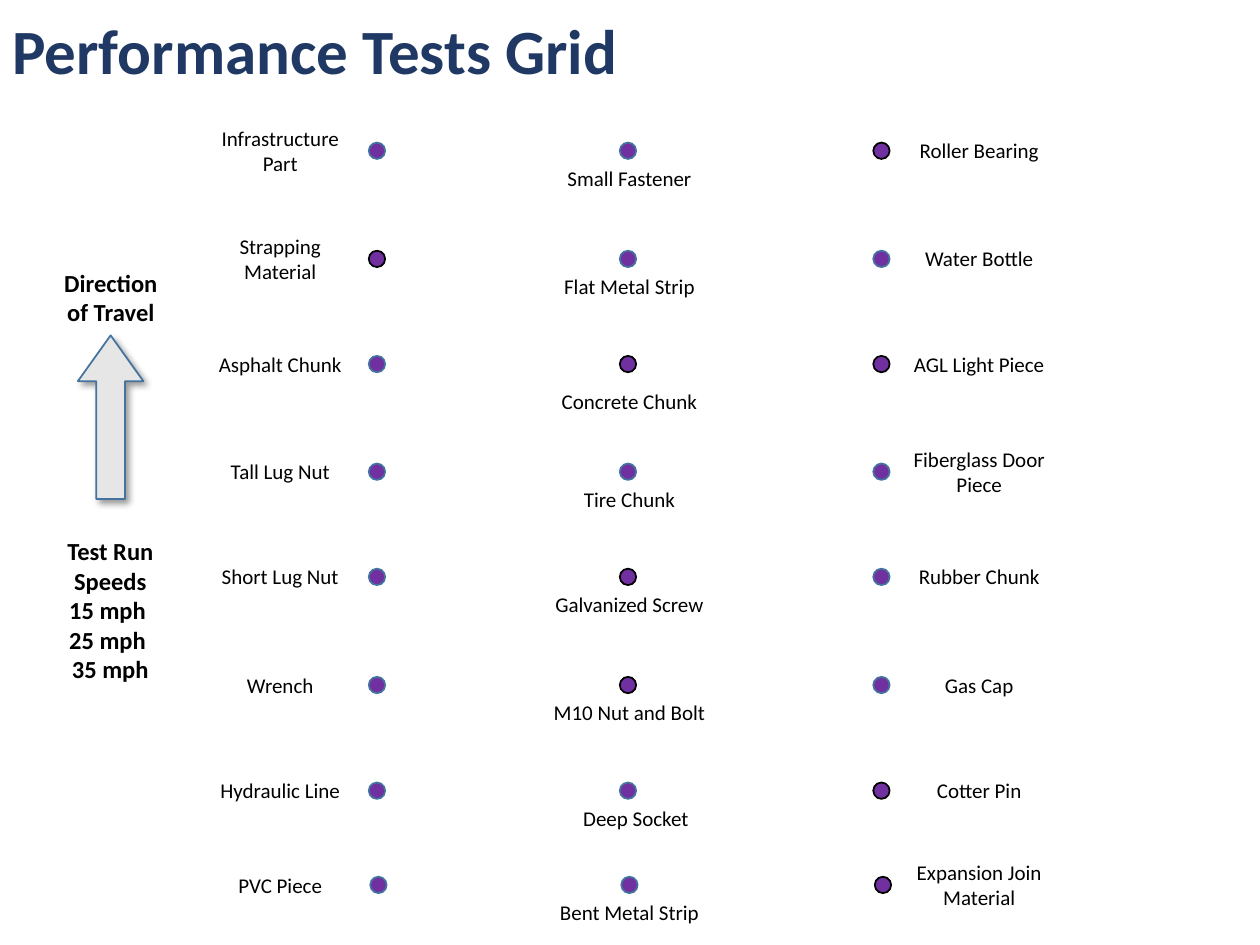
from lxml import etree
from pptx import Presentation
from pptx.dml.color import RGBColor
from pptx.enum.shapes import MSO_SHAPE
from pptx.enum.text import MSO_ANCHOR, PP_ALIGN
from pptx.oxml.ns import qn
from pptx.util import Cm, Pt

OVAL, DOWN_ARROW = MSO_SHAPE.OVAL, MSO_SHAPE.DOWN_ARROW
TOP, MIDDLE = MSO_ANCHOR.TOP, MSO_ANCHOR.MIDDLE
LEFT, CENTER = PP_ALIGN.LEFT, PP_ALIGN.CENTER

# Content: row centre (cm), then left, middle and right test objects
ROWS = [
    (3.04, "Infrastructure Part", "Small Fastener", "Roller Bearing"),
    (5.22, "Strapping Material", "Flat Metal Strip", "Water Bottle"),
    (7.34, "Asphalt Chunk", "Concrete Chunk", "AGL Light Piece"),
    (9.51, "Tall Lug Nut", "Tire Chunk", "Fiberglass Door Piece"),
    (11.63, "Short Lug Nut", "Galvanized Screw", "Rubber Chunk"),
    (13.81, "Wrench", "M10 Nut and Bolt", "Gas Cap"),
    (15.94, "Hydraulic Line", "Deep Socket", "Cotter Pin"),
    (17.84, "PVC Piece", "Bent Metal Strip", "Expansion Join Material"),
]
BLACK_OUTLINED = {
    "Strapping Material", "Concrete Chunk", "Galvanized Screw",
    "M10 Nut and Bolt", "Roller Bearing", "AGL Light Piece", "Cotter Pin",
    "Expansion Join Material",
}
TWO_LINE = {
    "Infrastructure Part", "Strapping Material",
    "Fiberglass Door Piece", "Expansion Join Material",
}
SPEEDS = "Test Run Speeds\n15 mph \n25 mph \n35 mph"

THEME = {
    "font": "Calibri",
    "title": RGBColor(0x20, 0x38, 0x64),
    "text": RGBColor(0, 0, 0),
    "dot": RGBColor(0x70, 0x30, 0xA0),
    "outline": RGBColor(0x43, 0x73, 0x9E),
    "arrow": RGBColor(0xE7, 0xE6, 0xE6),
    "title_size": 36, "note_size": 14, "label_size": 12,
}

# Grid, in cm: dot centre and label left edge of each column
COLUMNS = [(7.6, 3.85), (12.66, 10.89), (17.77, 17.94)]
MIDDLE_COLUMN = 1
DOT_SIZE = 0.33
LABEL_WIDTH, LINE_HEIGHT, TWO_LINE_HEIGHT = 3.6, 0.77, 1.28
LABEL_DROP = 0.17
EXTRA_DROP = {"Concrete Chunk": 0.2}
EXTRA_RIGHT = {"Deep Socket": 0.13}
LAST_ROW_SHIFT = 0.03


def add_text(slide, text, left, top, width, height, size, bold=False,
             color=THEME["text"], align=CENTER, anchor=TOP):
    box = slide.shapes.add_textbox(Cm(left), Cm(top), Cm(width), Cm(height))
    text_frame = box.text_frame
    text_frame.word_wrap = True
    text_frame.vertical_anchor = anchor
    text_frame.text = text
    for paragraph in text_frame.paragraphs:
        paragraph.alignment = align
        font = paragraph.runs[0].font
        font.name, font.size, font.bold = THEME["font"], Pt(size), bold
        font.color.rgb = color
    return box


def add_outlined(slide, kind, left, top, width, height, fill, outline):
    shape = slide.shapes.add_shape(kind, Cm(left), Cm(top), Cm(width), Cm(height))
    shape.shadow.inherit = False
    shape.fill.solid()
    shape.fill.fore_color.rgb = fill
    shape.line.color.rgb = outline
    shape.line.width = Pt(1)
    return shape


def add_shadow(shape):
    effects = shape._element.spPr.find(qn("a:effectLst"))
    shadow = etree.SubElement(
        effects, qn("a:outerShdw"), blurRad=str(Pt(4)), dist=str(Pt(3)),
        dir="2700000", algn="tl", rotWithShape="0")
    color = etree.SubElement(shadow, qn("a:srgbClr"), val="000000")
    etree.SubElement(color, qn("a:alpha"), val="40000")


def add_test_object(slide, name, column, row_center, shift):
    dot_center, label_left = COLUMNS[column]
    outline = THEME["text"] if name in BLACK_OUTLINED else THEME["outline"]
    add_outlined(slide, OVAL, dot_center - DOT_SIZE / 2 + shift,
                 row_center - DOT_SIZE / 2, DOT_SIZE, DOT_SIZE,
                 THEME["dot"], outline)
    height = TWO_LINE_HEIGHT if name in TWO_LINE else LINE_HEIGHT
    if column == MIDDLE_COLUMN:
        top = row_center + LABEL_DROP + EXTRA_DROP.get(name, 0)
    else:
        top = row_center - height / 2
    add_text(slide, name, label_left + EXTRA_RIGHT.get(name, 0), top,
             LABEL_WIDTH, height, THEME["label_size"])


def main():
    presentation = Presentation()
    presentation.slide_width, presentation.slide_height = Cm(25.4), Cm(19.05)
    slide = presentation.slides.add_slide(presentation.slide_layouts[6])

    # Title
    title = add_text(slide, "Performance Tests Grid", 0, 0, 19.56, 2.18,
                     THEME["title_size"], True, THEME["title"], LEFT, MIDDLE)
    title.text_frame.paragraphs[0].line_spacing = 0.9

    # Grid of test objects
    for row_center, *names in ROWS:
        shift = LAST_ROW_SHIFT if row_center == ROWS[-1][0] else 0
        for column, name in enumerate(names):
            add_test_object(slide, name, column, row_center, shift)

    # Direction of travel and speeds
    add_text(slide, "Direction of Travel", 0.89, 5.28, 2.69, 1.45,
             THEME["note_size"], True)
    arrow = add_outlined(slide, DOWN_ARROW, 1.57, 6.76, 1.32, 3.3,
                         THEME["arrow"], THEME["outline"])
    arrow.rotation = 180
    arrow.adjustments[0], arrow.adjustments[1] = 0.44, 0.7
    add_shadow(arrow)
    add_text(slide, SPEEDS, 0.61, 10.69, 3.23, 3.25, THEME["note_size"], True)

    presentation.save("out.pptx")


if __name__ == "__main__":
    main()
